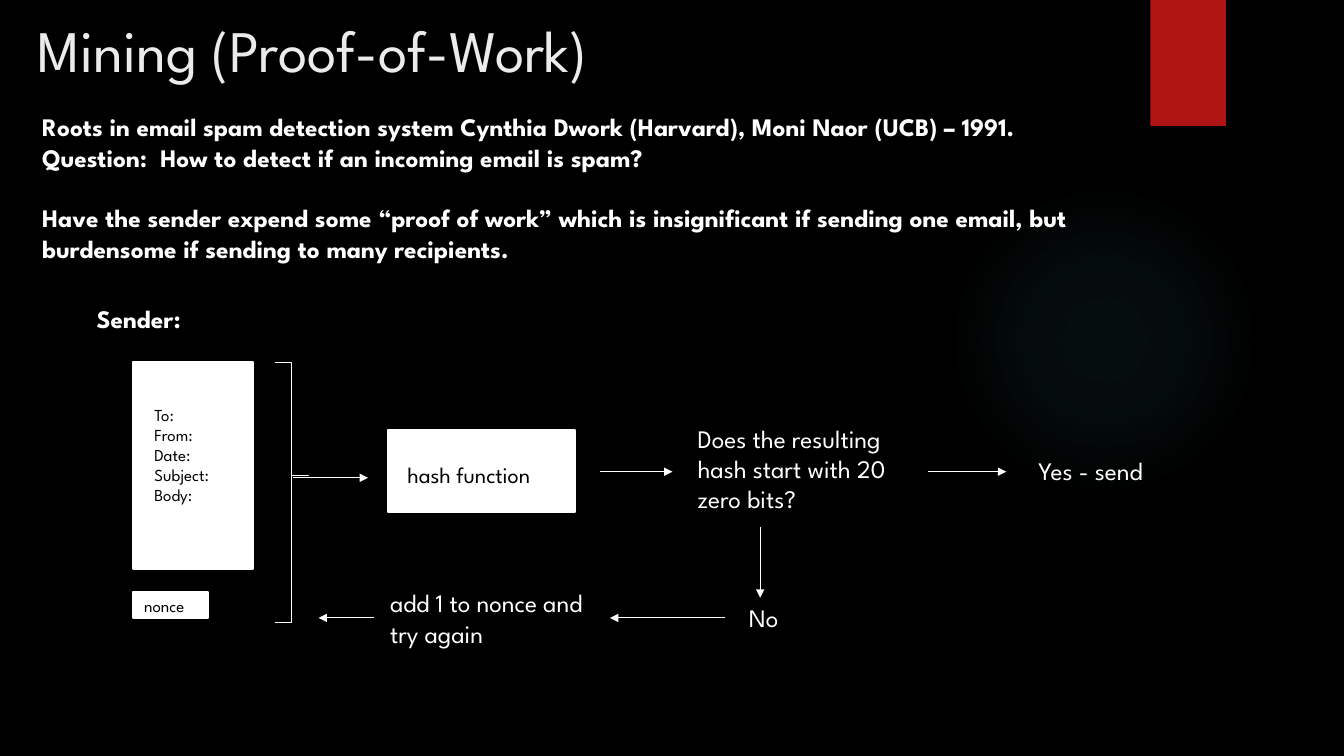
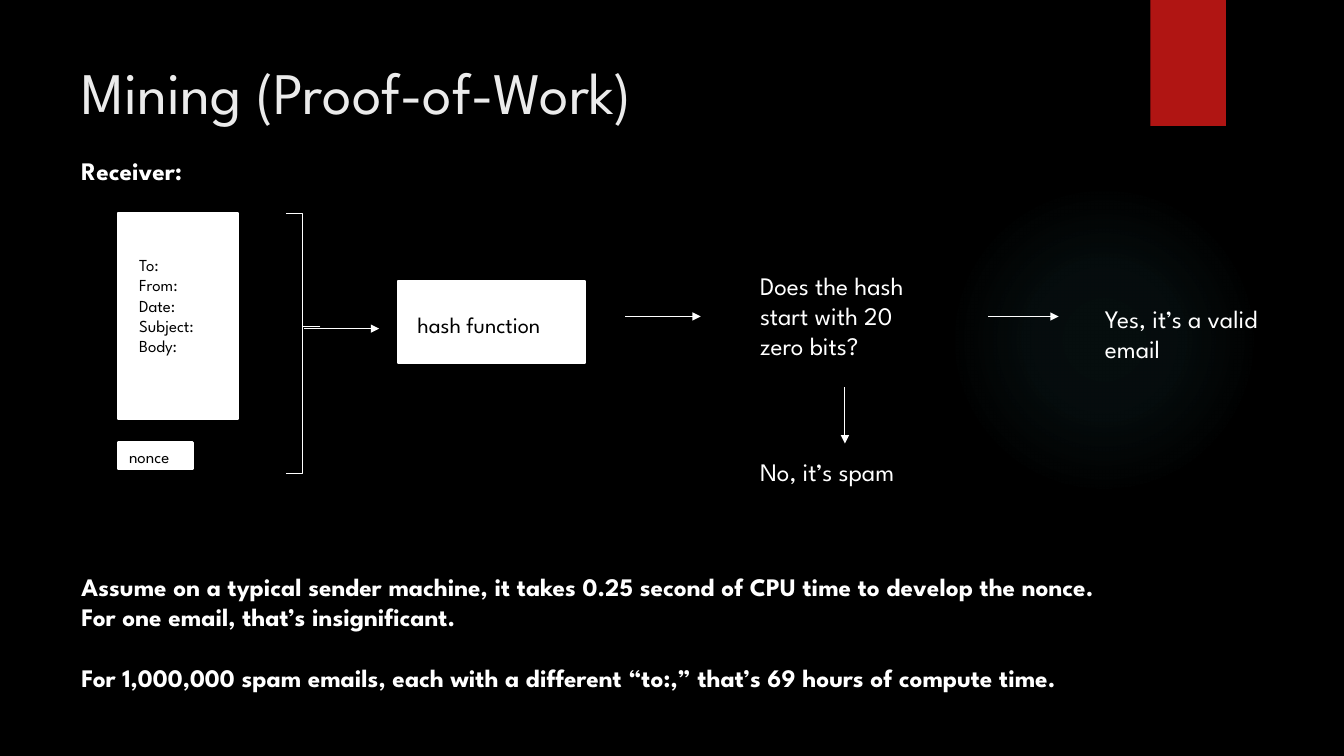
"""Build two slides on proof-of-work: the sender's flow and the receiver's flow."""
import dataclasses

import pptx
import pptx.dml.color
import pptx.enum.shapes
import pptx.enum.text
import pptx.oxml
import pptx.oxml.ns
import pptx.util

Inches, Pt = pptx.util.Inches, pptx.util.Pt
SHAPE = pptx.enum.shapes.MSO_SHAPE


@dataclasses.dataclass(frozen=True)
class Theme:
    font: str = "League Spartan"
    back: str = "000000"
    ink: str = "FFFFFF"
    dark: str = "000000"
    title: str = "EBEBEB"
    ribbon: str = "B01513"
    glow: str = "50B9C1"
    title_size: float = 42
    body_size: float = 18
    box_size: float = 16
    small_size: float = 12
    gap: float = 21.7
    thin: float = 0.75
    outline: float = 1.5


T = Theme()
TITLE = "Mining (Proof-of-Work)"
EMAIL = ["To:", "From:", "Date:", "Subject:", "Body:"]
GLOW_STOPS = [(0, 7), (36, 6), (69, 0)]

SLIDES = [
    {
        "title_at": (0.27, 0.09),
        "flow": {"x": 1.32, "y": 3.59, "brace_x": 2.73, "hash_x": 3.85},
        "bold": [
            (0.32, 1.06, 11.73, 1.92, [
                "Roots in email spam detection system Cynthia Dwork (Harvard), Moni Naor (UCB) – 1991.",
                "Question:  How to detect if an incoming email is spam?",
                "Have the sender expend some “proof of work” which is insignificant if sending one "
                "email, but burdensome if sending to many recipients."]),
            (0.86, 2.96, 1.13, 0.4, ["Sender:"]),
        ],
        "steps": [
            (6.82, 4.15, 2.38, 1.01, ["Does the resulting hash start with 20 zero bits?"]),
            (10.2, 4.47, 1.43, 0.4, ["Yes - send"]),
            (7.33, 5.93, 1.71, 0.4, ["No"]),
            (3.77, 5.78, 2.41, 0.71, ["add 1 to nonce and try again"]),
        ],
        "arrows": [
            (5.95, 4.68, 6.67, 4.68),
            (9.2, 4.68, 9.98, 4.68),
            (7.54, 5.23, 7.54, 5.93),
            (7.19, 6.13, 6.05, 6.13),
            (3.71, 6.13, 3.16, 6.13),
        ],
    },
    {
        "title_at": (0.71, 0.5),
        "flow": {"x": 1.17, "y": 2.11, "brace_x": 2.84, "hash_x": 3.95},
        "bold": [
            (0.71, 1.49, 1.35, 0.4, ["Receiver:"]),
            (0.71, 5.62, 11.56, 1.31, [
                "Assume on a typical sender machine, it takes 0.25 second of CPU time to develop the nonce.",
                "For one email, that’s insignificant.",
                "For 1,000,000 spam emails, each with a different “to:,” that’s 69 hours of compute time."]),
        ],
        "steps": [
            (7.44, 2.63, 1.93, 1.01, ["Does the hash start with 20 zero bits?"]),
            (10.86, 2.96, 1.98, 0.71, ["Yes, it’s a valid", "email"]),
            (7.44, 4.48, 2.4, 0.4, ["No, it’s spam"]),
        ],
        "arrows": [
            (6.2, 3.14, 6.95, 3.14),
            (9.8, 3.14, 10.5, 3.14),
            (8.38, 3.84, 8.38, 4.4),
        ],
    },
]


def rgb(value):
    return pptx.dml.color.RGBColor.from_string(value)


def xml(tag, body="", attrs=""):
    ns = pptx.oxml.ns.nsdecls("a")
    return pptx.oxml.parse_xml(f"<a:{tag} {ns} {attrs}>{body}</a:{tag}>")


def write(tf, lines, size=T.body_size, color=T.ink, bold=False, gap_at=None,
          inset=(0.1, 0.05, 0.1, 0.05)):
    tf.word_wrap = True
    tf.vertical_anchor = pptx.enum.text.MSO_ANCHOR.TOP
    tf.margin_left, tf.margin_top, tf.margin_right, tf.margin_bottom = map(Inches, inset)
    for i, line in enumerate(lines):
        p = tf.paragraphs[0] if i == 0 else tf.add_paragraph()
        p.alignment = pptx.enum.text.PP_ALIGN.LEFT
        if i == gap_at:
            p.space_before = Pt(T.gap)
        r = p.add_run()
        r.text = line
        r.font.name, r.font.size, r.font.bold = T.font, Pt(size), bold
        r.font.color.rgb = rgb(color)


def add_text(s, x, y, w, h, lines, **fmt):
    box = s.shapes.add_textbox(*map(Inches, (x, y, w, h)))
    write(box.text_frame, lines, **fmt)


def add_shape(s, kind, x, y, w, h, fill=None, line=None, width=T.outline):
    sp = s.shapes.add_shape(kind, *map(Inches, (x, y, w, h)))
    sp.shadow.inherit = False
    if fill:
        sp.fill.solid()
        sp.fill.fore_color.rgb = rgb(fill)
    else:
        sp.fill.background()
    if line:
        sp.line.color.rgb = rgb(line)
        sp.line.width = Pt(width)
    else:
        sp.line.fill.background()
    return sp


def add_box(s, x, y, w, h, lines, size, left, top):
    sp = add_shape(s, SHAPE.RECTANGLE, x, y, w, h, T.ink, T.ink)
    write(sp.text_frame, lines, size=size, color=T.dark, inset=(left, top, 0, 0))


def add_arrow(s, x1, y1, x2, y2):
    line = s.shapes.add_connector(pptx.enum.shapes.MSO_CONNECTOR.STRAIGHT,
                                  *map(Inches, (x1, y1, x2, y2)))
    line.line.color.rgb = rgb(T.ink)
    line.line.width = Pt(T.thin)
    line.line._get_or_add_ln().append(xml("tailEnd", attrs='type="triangle"'))
    line._element.spPr.append(xml("effectLst"))


def add_flow(s, x, y, brace_x, hash_x):
    add_box(s, x, y, 1.19, 2.05, EMAIL, T.small_size, 0.21, 0.42)
    add_box(s, x, y + 2.28, 0.74, 0.26, ["nonce"], T.small_size, 0.11, 0.04)
    add_box(s, hash_x, y + 0.68, 1.85, 0.81, ["hash function"], T.box_size, 0.19, 0.3)
    brace = add_shape(s, SHAPE.RIGHT_BRACE, brace_x, y + 0.01, 0.33, 2.58,
                      line=T.ink, width=T.thin)
    brace.adjustments[0], brace.adjustments[1] = 0, 0.433
    add_arrow(s, brace_x + 0.18, y + 1.15, brace_x + 0.92, y + 1.15)


def decorate(layout, s):
    glow = add_shape(s, SHAPE.OVAL, 9.41, 1.83, 3.08, 3.08, T.glow)
    stops = "".join(
        f'<a:gs pos="{pos * 1000}"><a:srgbClr val="{T.glow}">'
        f'<a:alpha val="{alpha * 1000}"/></a:srgbClr></a:gs>' for pos, alpha in GLOW_STOPS)
    center = '<a:fillToRect l="50000" t="50000" r="50000" b="50000"/>'
    grad = xml("gradFill", f'<a:gsLst>{stops}</a:gsLst><a:path path="circle">{center}</a:path>')
    spPr = glow._element.spPr
    spPr.replace(spPr.find(pptx.oxml.ns.qn("a:solidFill")), grad)
    ribbon = add_shape(s, SHAPE.RECTANGLE, 11.41, 0, 0.75, 1.25, T.ribbon)
    ribbon._element.spPr.find(pptx.oxml.ns.qn("a:effectLst")).append(xml(
        "outerShdw", '<a:srgbClr val="000000"><a:alpha val="45000"/></a:srgbClr>',
        f'blurRad="{Pt(3)}" dist="{Pt(2)}" dir="5400000"'))
    for sp in (glow, ribbon):
        layout.shapes.element.append(sp._element)


def build_slide(s, data):
    title = s.shapes.title
    title.left, title.top = map(Inches, data["title_at"])
    title.width, title.height = Inches(10.29), Inches(1.53)
    write(title.text_frame, [TITLE], size=T.title_size, color=T.title)
    for block in data["bold"]:
        add_text(s, *block, bold=True, gap_at=2)
    add_flow(s, **data["flow"])
    for step in data["steps"]:
        add_text(s, *step)
    for ends in data["arrows"]:
        add_arrow(s, *ends)


def main():
    prs = pptx.Presentation()
    prs.slide_width, prs.slide_height = Inches(13.33), Inches(7.5)
    fill = prs.slide_master.background.fill
    fill.solid()
    fill.fore_color.rgb = rgb(T.back)
    layout = prs.slide_layouts[5]
    slides = [prs.slides.add_slide(layout) for _ in SLIDES]
    decorate(layout, slides[0])
    for s, data in zip(slides, SLIDES):
        build_slide(s, data)
    prs.save("out.pptx")


if __name__ == "__main__":
    main()
